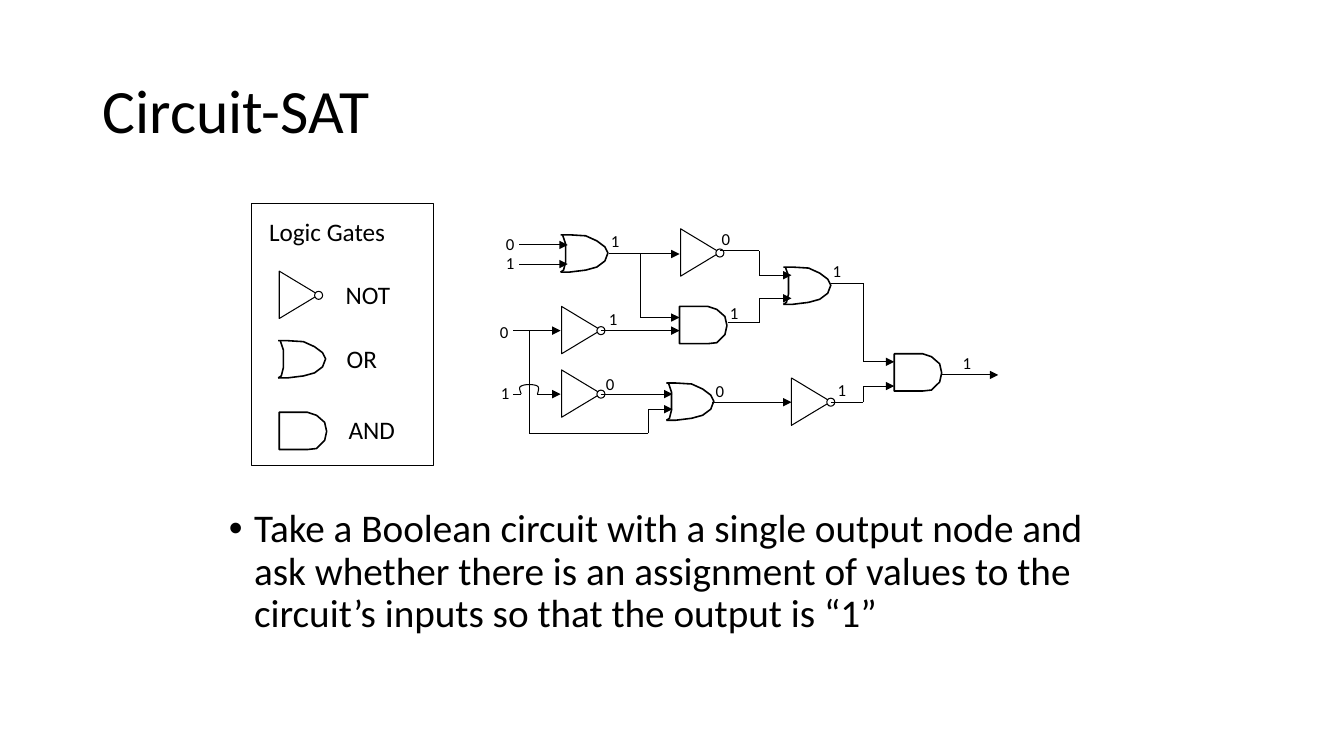
from dataclasses import dataclass
from itertools import pairwise

from lxml.etree import SubElement
from pptx import Presentation
from pptx.dml.color import RGBColor
from pptx.enum.shapes import MSO_CONNECTOR, MSO_SHAPE
from pptx.enum.text import MSO_ANCHOR, MSO_AUTO_SIZE, PP_ALIGN
from pptx.oxml.ns import qn
from pptx.util import Inches, Pt


@dataclass(frozen=True)
class Theme:
    ink = RGBColor(0, 0, 0)
    paper = RGBColor(255, 255, 255)
    font = "Calibri"
    title = Pt(44)
    body = Pt(28)
    legend = Pt(18)
    bit = Pt(12)
    thin = Pt(0.75)
    thick = Pt(1.13)


theme = Theme()


def trace(shapes, points, width, closed=False):
    """Draw an unfilled outline through points given in inches."""
    corners = [(Inches(x), Inches(y)) for x, y in points]
    builder = shapes.build_freeform(*corners[0])
    builder.add_line_segments(corners[1:], close=closed)
    outline = builder.convert_to_shape()
    outline.shadow.inherit = False
    outline.fill.background()
    outline.line.color.rgb = theme.ink
    outline.line.width = width


def write(frame, text, size):
    """Put one run into the frame's first paragraph and return the paragraph."""
    para = frame.paragraphs[0]
    span = para.add_run()
    span.text = text
    span.font.name = theme.font
    span.font.size = size
    span.font.color.rgb = theme.ink
    return para


deck = Presentation()
deck.slide_width, deck.slide_height = Inches(13.33), Inches(7.5)
slide = deck.slides.add_slide(deck.slide_layouts[1])
title, body = slide.placeholders

# Title and bullet
title.left, title.top = Inches(0.92), Inches(0.4)
title.width, title.height = Inches(11.5), Inches(1.45)
title.text_frame.auto_size = MSO_AUTO_SIZE.NONE
title.text_frame.vertical_anchor = MSO_ANCHOR.MIDDLE
para = write(title.text_frame, "Circuit-SAT", theme.title)
para.alignment = PP_ALIGN.LEFT
para.line_spacing = 0.9

body.left, body.top = Inches(2.17), Inches(5)
body.width, body.height = Inches(9), Inches(1.89)
body.text_frame.auto_size = MSO_AUTO_SIZE.NONE
para = write(
    body.text_frame,
    "Take a Boolean circuit with a single output node and ask whether there is "
    "an assignment of values to the circuit’s inputs so that the output is “1”",
    theme.body,
)
para.line_spacing = 0.9
para.space_before = Pt(0)
bullet_props = para._p.get_or_add_pPr()
bullet_props.set("marL", str(Inches(0.25)))
bullet_props.set("indent", str(Inches(-0.25)))
SubElement(bullet_props, qn("a:buFont"), typeface="Arial")
SubElement(bullet_props, qn("a:buChar"), char="•")

# Legend frame
legend = slide.shapes.add_shape(
    MSO_SHAPE.RECTANGLE, Inches(2.49), Inches(2.02), Inches(1.81), Inches(2.6))
legend.shadow.inherit = False
legend.fill.background()
legend.line.color.rgb = theme.ink
legend.line.width = theme.thin

# NOT gates: left and top of the unrotated triangle
for x, y in [(2.73, 2.73), (7.81, 3.79), (6.71, 2.31), (5.53, 3.71), (5.53, 3.08)]:
    gate = slide.shapes.add_group_shape()
    triangle = gate.shapes.add_shape(
        MSO_SHAPE.ISOSCELES_TRIANGLE, Inches(x), Inches(y), Inches(0.47), Inches(0.39))
    triangle.rotation = 90
    bubble = gate.shapes.add_shape(
        MSO_SHAPE.OVAL, Inches(x + 0.39), Inches(y + 0.16), Inches(0.08), Inches(0.08))
    for part in (triangle, bubble):
        part.shadow.inherit = False
        part.fill.solid()
        part.fill.fore_color.rgb = theme.paper
        part.line.color.rgb = theme.ink
        part.line.width = theme.thin

# OR gates: left and top
or_front = [(0, 0), (0.09, 0), (0.25, 0.01), (0.36, 0.06), (0.44, 0.12), (0.47, 0.18),
            (0.44, 0.26), (0.36, 0.32), (0.25, 0.35), (0.09, 0.37), (0, 0.37)]
or_back = [(0.02, 0), (0.03, 0.03), (0.05, 0.09), (0.05, 0.27), (0.03, 0.35), (0, 0.37)]
for x, y in [(2.76, 3.38), (7.77, 2.65), (6.61, 3.8), (5.56, 2.33)]:
    gate = slide.shapes.add_group_shape()
    for curve in (or_front, or_back):
        trace(gate.shapes, [(x + dx, y + dy) for dx, dy in curve], theme.thick)

# AND gates: left and top
and_outline = [(0, 0), (0.28, 0), (0.37, 0.03), (0.45, 0.1), (0.47, 0.19),
               (0.45, 0.28), (0.37, 0.36), (0.28, 0.37), (0, 0.37)]
for x, y in [(2.77, 4.09), (8.87, 3.51), (6.74, 3.04)]:
    trace(slide.shapes, [(x + dx, y + dy) for dx, dy in and_outline], theme.thick, True)

# Wires: corner points, and whether the last leg ends in an arrow
wires = [
    ([(5.15, 2.43), (5.63, 2.43)], True),
    ([(5.15, 2.62), (5.63, 2.62)], True),
    ([(5.09, 3.28), (5.56, 3.28)], True),
    ([(5.09, 3.91), (5.17, 3.91)], False),
    ([(5.33, 3.91), (5.56, 3.91)], True),
    ([(5.96, 3.91), (6.67, 3.91)], True),
    ([(5.25, 3.28), (5.25, 4.3), (6.43, 4.3), (6.43, 4.06), (6.67, 4.06)], True),
    ([(5.96, 3.28), (6.74, 3.28)], True),
    ([(6.04, 2.52), (6.74, 2.52)], True),
    ([(6.35, 2.52), (6.35, 3.15), (6.74, 3.15)], True),
    ([(7.22, 3.2), (7.53, 3.2), (7.53, 2.96), (7.85, 2.96)], True),
    ([(7.14, 2.49), (7.53, 2.49), (7.53, 2.73), (7.85, 2.73)], True),
    ([(8.24, 2.81), (8.56, 2.81), (8.56, 3.59), (8.87, 3.59)], True),
    ([(7.06, 3.99), (7.85, 3.99)], True),
    ([(8.24, 3.99), (8.56, 3.99), (8.56, 3.83), (8.87, 3.83)], True),
    ([(9.34, 3.72), (9.9, 3.72)], True),
]
for corners, has_arrow in wires:
    for start, end in pairwise(corners):
        leg = slide.shapes.add_connector(
            MSO_CONNECTOR.STRAIGHT, *(Inches(value) for value in start + end))
        leg.line.color.rgb = theme.ink
        leg.line.width = theme.thin
        if has_arrow and end == corners[-1]:
            SubElement(leg.line._get_or_add_ln(), qn("a:tailEnd"), type="triangle")
        SubElement(leg._element.spPr, qn("a:effectLst"))

# Bridge where the lower input crosses a wire, sampled from cubic curves
bridge_curves = [
    [(5.17, 3.91), (5.16, 3.88), (5.14, 3.84), (5.17, 3.83)],
    [(5.17, 3.83), (5.2, 3.81), (5.3, 3.81), (5.33, 3.83)],
    [(5.33, 3.83), (5.35, 3.84), (5.34, 3.88), (5.33, 3.91)],
]
bridge = []
for curve in bridge_curves:
    for step in range(9):
        t = step / 8
        weights = ((1 - t) ** 3, 3 * t * (1 - t) ** 2, 3 * t ** 2 * (1 - t), t ** 3)
        bridge.append([sum(w * point[axis] for w, point in zip(weights, curve))
                       for axis in (0, 1)])
trace(slide.shapes, bridge, theme.thin)

# Labels: text, left, top, width
legend_labels = [("Logic Gates", 2.57, 2.1, 1.37), ("NOT", 3.33, 2.72, 0.65),
                 ("AND", 3.36, 4.06, 0.67), ("OR", 3.34, 3.36, 0.51)]
bits = {
    "0": [(7, 3.73), (5.91, 3.66), (7.06, 2.22), (4.92, 2.27), (4.86, 3.14)],
    "1": [(9.45, 3.45), (8.16, 2.54), (8.21, 3.72), (7.14, 2.95), (5.94, 3.01),
          (5.96, 2.24), (4.92, 2.46), (4.87, 3.75)],
}
labels = [(*label, 0.4, theme.legend) for label in legend_labels]
labels += [(bit, x, y, 0.29, 0.3, theme.bit) for bit, spots in bits.items() for x, y in spots]
for text, x, y, width, height, size in labels:
    box = slide.shapes.add_textbox(Inches(x), Inches(y), Inches(width), Inches(height))
    box.text_frame.word_wrap = False
    box.text_frame.auto_size = MSO_AUTO_SIZE.SHAPE_TO_FIT_TEXT
    write(box.text_frame, text, size)

deck.save("out.pptx")
